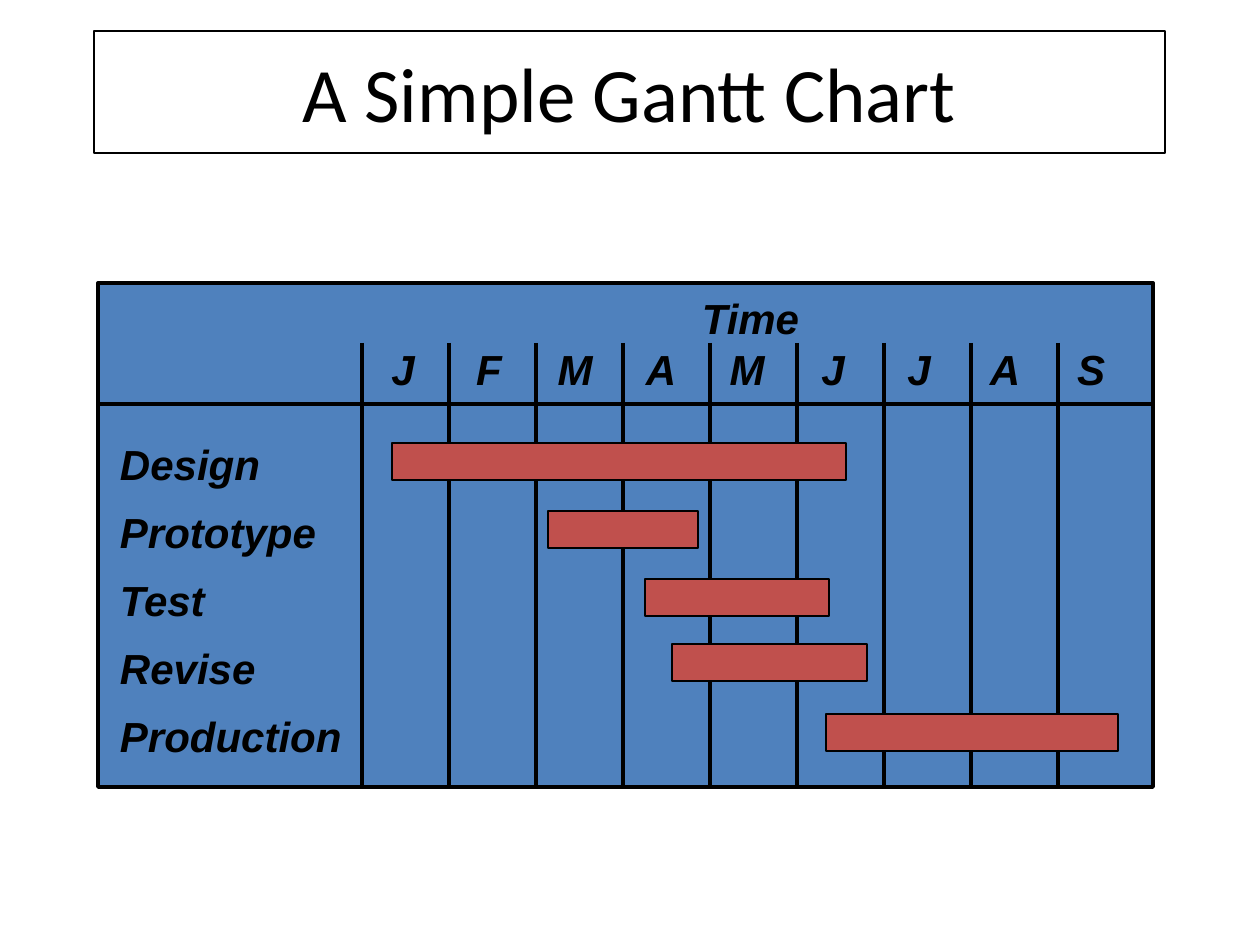
from dataclasses import dataclass

from lxml.etree import SubElement
from pptx import Presentation
from pptx.dml.color import RGBColor
from pptx.enum.shapes import MSO_CONNECTOR, MSO_SHAPE
from pptx.enum.text import MSO_ANCHOR, PP_ALIGN
from pptx.oxml.ns import qn
from pptx.util import Emu, Pt

PIXELS_PER_INCH = 126
BLACK = RGBColor(0x00, 0x00, 0x00)
BLUE = RGBColor(0x4F, 0x81, 0xBD)
RED = RGBColor(0xC0, 0x50, 0x4D)

CHART_LEFT, CHART_TOP, CHART_WIDTH, CHART_HEIGHT = 98, 283, 1055, 504
HEADER_BOTTOM = 404
MONTH_LINE_TOP = 343
FIRST_MONTH_LEFT = 362
MONTH_WIDTH = 87
FIRST_LETTER_CENTER = 403
LETTER_STEP = 86
HEADER_LEFT = 377
INSET_X, INSET_Y = 12, 6
BAR_HEIGHT = 37
MONTHS = "JFMAMJJAS"


@dataclass(frozen=True)
class Task:
    name: str
    left: int
    top: int
    width: int


TASKS = [
    Task("Design", 392, 443, 454),
    Task("Prototype", 548, 511, 150),
    Task("Test", 645, 579, 184),
    Task("Revise", 672, 644, 195),
    Task("Production", 826, 714, 292),
]


def px(value: int) -> Emu:
    return Emu(round(value * 914400 / PIXELS_PER_INCH))


def write_text(paragraph, text: str, *, font="Arial", size=24, bold=True,
               italic=True, align=PP_ALIGN.LEFT, spacing=None) -> None:
    run = paragraph.add_run()
    run.text = text
    run.font.name = font
    run.font.size = Pt(size)
    run.font.bold = bold
    run.font.italic = italic
    run.font.color.rgb = BLACK
    paragraph.alignment = align
    if spacing is not None:
        paragraph.line_spacing = spacing


def add_text_frame(slide, left: int, top: int, width: int, height: int):
    box = slide.shapes.add_textbox(px(left), px(top), px(width), px(height))
    frame = box.text_frame
    frame.word_wrap = True
    frame.margin_left = frame.margin_right = px(INSET_X)
    frame.margin_top = frame.margin_bottom = px(INSET_Y)
    return frame


def add_rectangle(slide, left: int, top: int, width: int, height: int,
                  color: RGBColor, line_width: float) -> None:
    shape = slide.shapes.add_shape(
        MSO_SHAPE.RECTANGLE, px(left), px(top), px(width), px(height))
    shape.shadow.inherit = False
    shape.fill.solid()
    shape.fill.fore_color.rgb = color
    shape.line.color.rgb = BLACK
    shape.line.width = Pt(line_width)


def add_line(slide, x1: int, y1: int, x2: int, y2: int) -> None:
    connector = slide.shapes.add_connector(
        MSO_CONNECTOR.STRAIGHT, px(x1), px(y1), px(x2), px(y2))
    connector.line.color.rgb = BLACK
    connector.line.width = Pt(2.25)
    SubElement(connector._element.spPr, qn("a:effectLst"))


def add_title(slide) -> None:
    title = slide.shapes.title
    title.left, title.top, title.width, title.height = map(px, (94, 31, 1071, 122))
    title.line.color.rgb = BLACK
    title.line.width = Pt(0.75)
    title.text_frame.vertical_anchor = MSO_ANCHOR.MIDDLE
    write_text(title.text_frame.paragraphs[0], "A Simple Gantt Chart", font="Calibri",
               size=44, bold=False, italic=False, align=PP_ALIGN.CENTER)


def add_header(slide) -> None:
    frame = add_text_frame(slide, HEADER_LEFT, 287, 747, 113)
    write_text(frame.paragraphs[0], "Time", align=PP_ALIGN.CENTER)
    months = frame.add_paragraph()
    write_text(months, "".join(f"\t{month}" for month in MONTHS))
    tabs = SubElement(months._p.get_or_add_pPr(), qn("a:tabLst"))
    first_tab = FIRST_LETTER_CENTER - HEADER_LEFT - INSET_X
    for index in range(len(MONTHS)):
        position = px(first_tab + index * LETTER_STEP)
        SubElement(tabs, qn("a:tab"), pos=str(position), algn="ctr")


def add_grid(slide) -> None:
    chart_bottom = CHART_TOP + CHART_HEIGHT
    for index in range(len(MONTHS)):
        x = FIRST_MONTH_LEFT + index * MONTH_WIDTH
        add_line(slide, x, MONTH_LINE_TOP, x, chart_bottom)
    add_line(slide, CHART_LEFT, HEADER_BOTTOM, CHART_LEFT + CHART_WIDTH, HEADER_BOTTOM)


def add_tasks(slide) -> None:
    frame = add_text_frame(slide, 108, 415, 250, 353)
    for index, task in enumerate(TASKS):
        paragraph = frame.add_paragraph() if index else frame.paragraphs[0]
        write_text(paragraph, task.name, spacing=1.35)
        add_rectangle(slide, task.left, task.top, task.width, BAR_HEIGHT, RED, 0.75)


def main() -> None:
    presentation = Presentation()
    presentation.slide_width, presentation.slide_height = px(1260), px(945)
    slide = presentation.slides.add_slide(presentation.slide_layouts[5])
    add_title(slide)
    add_rectangle(slide, CHART_LEFT, CHART_TOP, CHART_WIDTH, CHART_HEIGHT, BLUE, 2.25)
    add_header(slide)
    add_grid(slide)
    add_tasks(slide)
    presentation.save("out.pptx")


if __name__ == "__main__":
    main()
